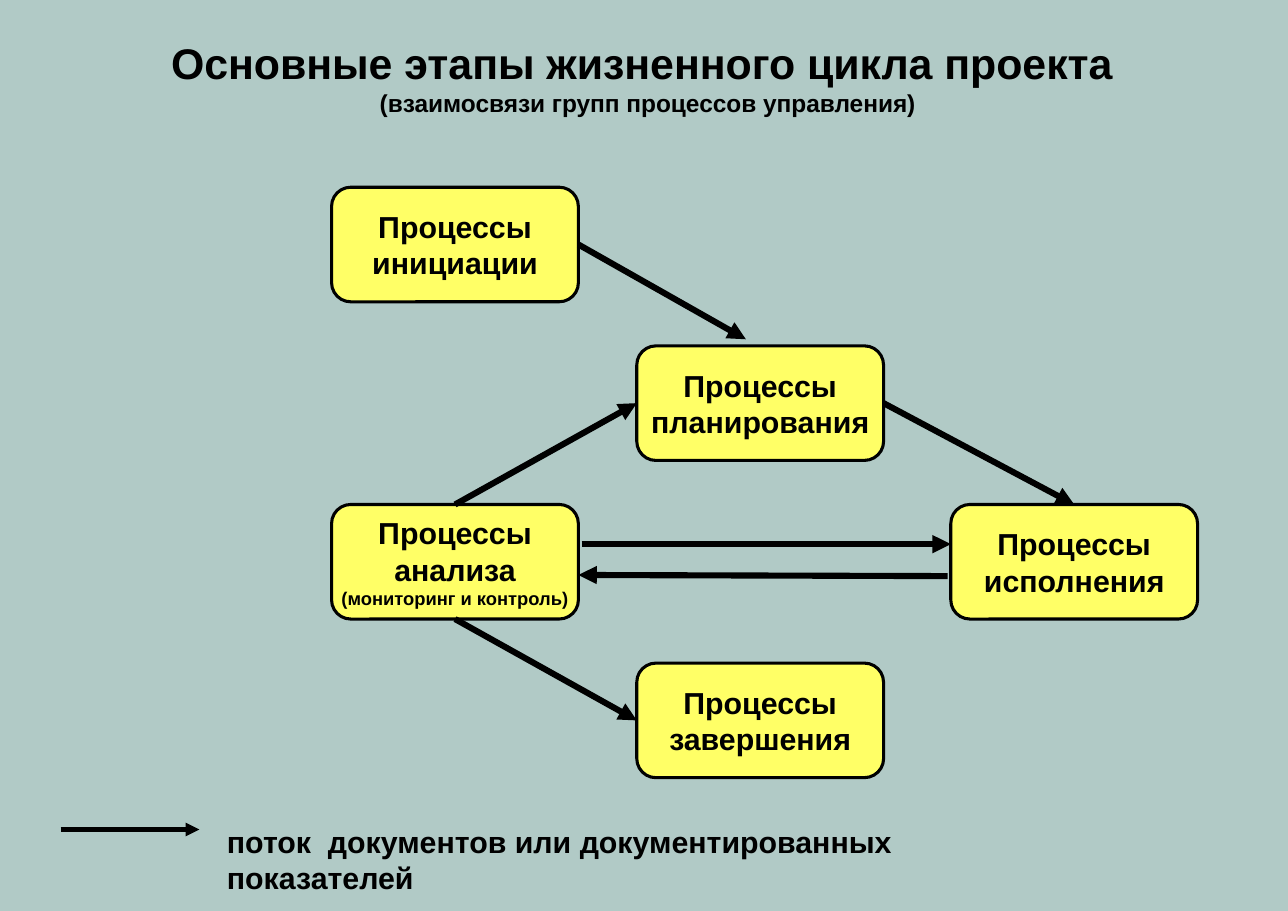
from dataclasses import dataclass

from lxml import etree
from pptx import Presentation
from pptx.dml.color import RGBColor
from pptx.enum.shapes import MSO_CONNECTOR, MSO_SHAPE
from pptx.enum.text import MSO_ANCHOR, MSO_AUTO_SIZE, PP_ALIGN
from pptx.oxml.ns import qn
from pptx.util import Inches, Pt

STRAIGHT = MSO_CONNECTOR.STRAIGHT
ROUNDED = MSO_SHAPE.ROUNDED_RECTANGLE
MIDDLE = MSO_ANCHOR.MIDDLE
NO_FIT = MSO_AUTO_SIZE.NONE
LEFT, CENTER = PP_ALIGN.LEFT, PP_ALIGN.CENTER
TOP_SIDE, LEFT_SIDE, BOTTOM_SIDE, RIGHT_SIDE = range(4)


@dataclass(frozen=True)
class Theme:
    font: str = "Arial"
    background: RGBColor = RGBColor(0xB1, 0xCA, 0xC6)
    box: RGBColor = RGBColor(0xFF, 0xFF, 0x66)
    ink: RGBColor = RGBColor(0, 0, 0)
    title: float = 28
    subtitle: float = 16
    body: float = 19.8
    note: float = 12
    outline: float = 2
    flow: float = 4
    legend: float = 3


THEME = Theme()

STAGES = {
    "initiation": (0, 0, "Процессы инициации", ""),
    "planning": (1, 1, "Процессы планирования", ""),
    "execution": (2, 2, "Процессы исполнения", ""),
    "analysis": (0, 2, "Процессы анализа ", "(мониторинг и контроль)"),
    "closing": (1, 3, "Процессы завершения", ""),
}
COLUMNS = (0, 2.77, 5.62)
ROW_STEP = 1.44
STAGE_W, STAGE_H = 2.24, 1.04
JOINED_FLOWS = (
    ("planning", RIGHT_SIDE, "execution", TOP_SIDE),
    ("analysis", TOP_SIDE, "planning", LEFT_SIDE),
    ("analysis", BOTTOM_SIDE, "closing", LEFT_SIDE),
)


def format_paragraph(p, size, align):
    p.alignment = align
    p.font.name = THEME.font
    p.font.size = Pt(size)
    p.font.bold = True
    p.font.color.rgb = THEME.ink


def add_run(p, text, size=None):
    r = p.add_run()
    r.text = text
    if size:
        r.font.size = Pt(size)


def add_arrow(s, width, x1=0, y1=0, x2=0, y2=0):
    arrow = s.shapes.add_connector(
        STRAIGHT, Inches(x1), Inches(y1), Inches(x2), Inches(y2))
    arrow.line.color.rgb = THEME.ink
    arrow.line.width = Pt(width)
    etree.SubElement(arrow.line._get_or_add_ln(), qn("a:tailEnd"), type="triangle")
    etree.SubElement(arrow._element.spPr, qn("a:effectLst"))
    return arrow


def add_title(s, x, y, w, h):
    title = s.shapes.title
    title.left, title.top = Inches(x), Inches(y)
    title.width, title.height = Inches(w), Inches(h)
    tf = title.text_frame
    tf.auto_size = NO_FIT
    tf.vertical_anchor = MIDDLE
    p = tf.paragraphs[0]
    format_paragraph(p, THEME.title, CENTER)
    add_run(p, "Основные этапы жизненного цикла проекта ")
    p.add_line_break()
    add_run(p, "(взаимосвязи групп процессов управления)", THEME.subtitle)


def add_stage(s, x, y, text, note):
    sp = s.shapes.add_shape(
        ROUNDED, Inches(x), Inches(y), Inches(STAGE_W), Inches(STAGE_H))
    sp.adjustments[0] = 0.167
    sp.shadow.inherit = False
    sp.fill.solid()
    sp.fill.fore_color.rgb = THEME.box
    sp.line.color.rgb = THEME.ink
    sp.line.width = Pt(THEME.outline)
    tf = sp.text_frame
    tf.word_wrap = True
    tf.vertical_anchor = MIDDLE
    tf.margin_left = tf.margin_right = tf.margin_top = tf.margin_bottom = 0
    p = tf.paragraphs[0]
    format_paragraph(p, THEME.body, CENTER)
    p.space_before = p.space_after = Pt(5.4)
    add_run(p, text)
    if note:
        add_run(p, note, THEME.note)
    return sp


def add_diagram(s, x, y):
    stages = {
        name: add_stage(s, x + COLUMNS[col], y + row * ROW_STEP, text, note)
        for name, (col, row, text, note) in STAGES.items()
    }
    for source, out_side, target, in_side in JOINED_FLOWS:
        arrow = add_arrow(s, THEME.flow)
        arrow.begin_connect(stages[source], out_side)
        arrow.end_connect(stages[target], in_side)

    to_planning = add_arrow(s, THEME.flow, x, y, x + 3.76, y + 1.38)
    to_planning.begin_connect(stages["initiation"], RIGHT_SIDE)

    near, far = x + STAGE_W, x + COLUMNS[2]
    add_arrow(s, THEME.flow, near + 0.03, y + 3.24, far, y + 3.24)
    add_arrow(s, THEME.flow, far - 0.03, y + 3.53, near, y + 3.52)


def add_legend(s, x, y, w, h):
    add_arrow(s, THEME.legend, x, y + 0.1, x + 1.26, y + 0.1)
    box = s.shapes.add_textbox(
        Inches(x + 1.42), Inches(y), Inches(w - 1.42), Inches(h))
    tf = box.text_frame
    tf.word_wrap = True
    tf.margin_left = tf.margin_right = Inches(0.09)
    tf.margin_top = tf.margin_bottom = Inches(0.04)
    p = tf.paragraphs[0]
    format_paragraph(p, THEME.body, LEFT)
    add_run(p, "поток  документов или документированных показателей")


def main():
    prs = Presentation()
    prs.slide_width, prs.slide_height = Inches(11.69), Inches(8.27)
    s = prs.slides.add_slide(prs.slide_layouts[5])
    s.background.fill.solid()
    s.background.fill.fore_color.rgb = THEME.background
    add_title(s, 0.9, 0, 9.96, 1.39)
    add_diagram(s, 3.01, 1.7)
    add_legend(s, 0.55, 7.43, 8.18, 0.42)
    prs.save("out.pptx")


if __name__ == "__main__":
    main()
